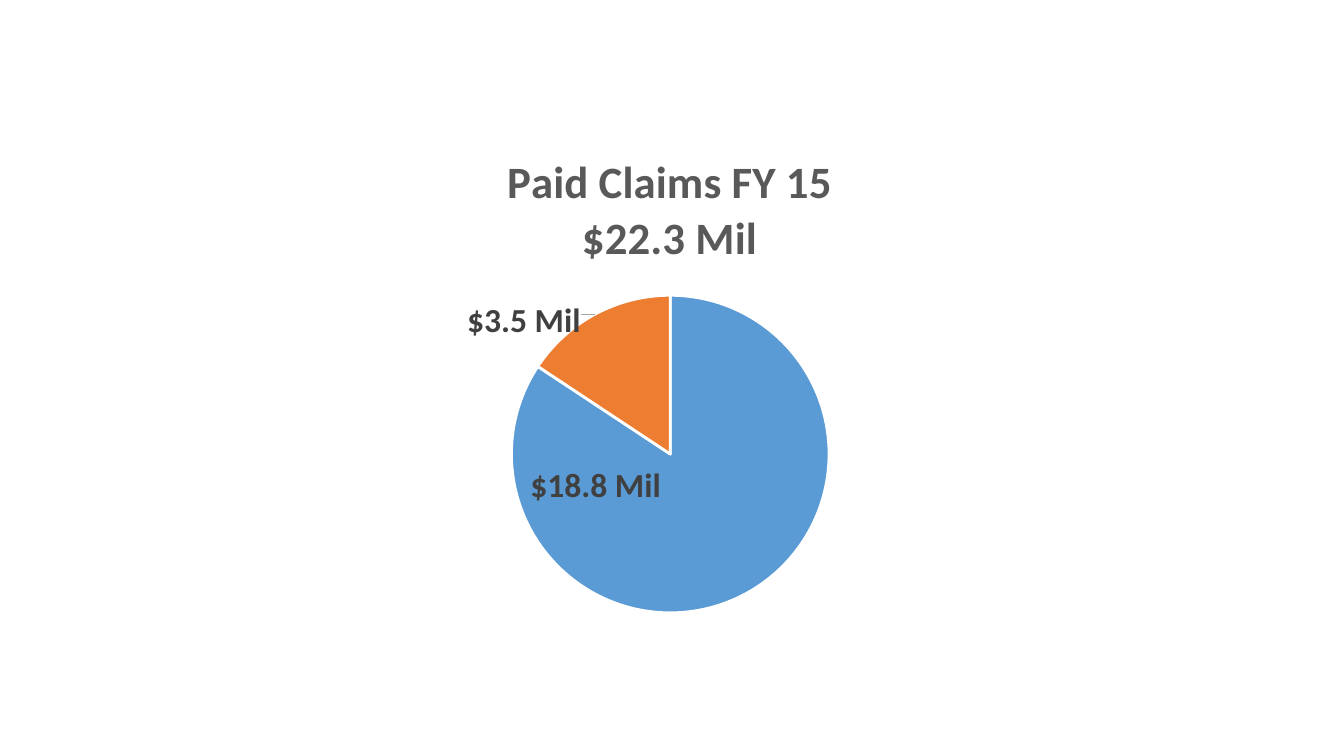
import pptx
import pptx.chart.data
import pptx.dml.color
import pptx.enum.chart
import pptx.oxml
import pptx.oxml.ns
import pptx.util

Pt = pptx.util.Pt
qn = pptx.oxml.ns.qn

# Content: amounts in dollars, label shift as a fraction of the chart
TITLE = ["Paid Claims FY 15", "$22.3 Mil"]
SERIES = "Series 1"
CLAIMS = [
    {"cat": "1", "value": 18800000, "color": "5B9BD5", "shift": (-0.16, -0.07)},
    {"cat": "2", "value": 3500000, "color": "ED7D31", "shift": (-0.155, -0.118)},
]
MILLIONS = '"$"0.0,," Mil"'

THEME = {
    "font": "Calibri", "title": "595959", "label": "404040",
    "edge": "FFFFFF", "leader": "A6A6A6",
    "title_size": 32, "label_size": 24, "base_size": 14,
}
SLIDE = (960, 540)
CHART = (228.24, 92.16, 501.12, 379.44)
TITLE_AT = {"x": 0.263, "y": 0.04}
PLOT_AT = {"x": 0.093, "y": 0.313, "w": 0.814, "h": 0.598}


def rgb(name):
    return pptx.dml.color.RGBColor.from_string(THEME.get(name, name))


def style(font, size, color):
    font.name = THEME["font"]
    font.size = Pt(THEME[size])
    font.bold = True
    font.color.rgb = rgb(color)


def chart_xml(body):
    return pptx.oxml.parse_xml(body.replace(
        ">", f" {pptx.oxml.ns.nsdecls('c', 'a')}>", 1))


def place(parent, index, at, edge=True, inner=False):
    """Put a manual layout at the given child index."""
    for old in parent.findall(qn("c:layout")):
        parent.remove(old)
    parts = ['<c:layoutTarget val="inner"/>'] if inner else []
    if edge:
        parts += [f'<c:{k}Mode val="edge"/>' for k in "xy"]
    parts += [f'<c:{k} val="{v}"/>' for k, v in at.items()]
    parent.insert(index, chart_xml(
        f"<c:layout><c:manualLayout>{''.join(parts)}</c:manualLayout></c:layout>"))


def keep_on_one_line(element):
    for body in element.iter(qn("a:bodyPr")):
        body.set("wrap", "none")


prs = pptx.Presentation()
prs.slide_width, prs.slide_height = map(Pt, SLIDE)
s = prs.slides.add_slide(prs.slide_layouts[6])

# Pie chart
data = pptx.chart.data.CategoryChartData(number_format='"$"#,##0')
data.categories = [c["cat"] for c in CLAIMS]
data.add_series(SERIES, [c["value"] for c in CLAIMS])
chart = s.shapes.add_chart(
    pptx.enum.chart.XL_CHART_TYPE.PIE, *map(Pt, CHART), data).chart
chart.has_legend = False
chart.font.name = THEME["font"]
chart.font.size = Pt(THEME["base_size"])
place(chart._chartSpace.chart.plotArea, 0, PLOT_AT, inner=True)

# Title
chart.has_title = True
tf = chart.chart_title.text_frame
for i, line in enumerate(TITLE):
    p = tf.add_paragraph() if i else tf.paragraphs[0]
    r = p.add_run()
    r.text = line
    style(r.font, "title_size", "title")
chart.chart_title.include_in_layout = False
place(chart.chart_title._element, 1, TITLE_AT)

# Slices and their labels
pie = chart.plots[0].series[0]
labels = pie.data_labels
labels.show_value = True
labels.number_format = MILLIONS
labels.number_format_is_linked = False
style(labels.font, "label_size", "label")
for i, claim in enumerate(CLAIMS):
    point = pie.points[i]
    point.format.fill.solid()
    point.format.fill.fore_color.rgb = rgb(claim["color"])
    point.format.line.color.rgb = rgb("edge")
    point.format.line.width = Pt(2)
    label = point.data_label
    style(label.font, "label_size", "label")
    label.position = pptx.enum.chart.XL_LABEL_POSITION.CENTER
    dlbl = label._dLbl
    place(dlbl, 1, dict(zip("xy", claim["shift"])), edge=False)
    fmt = chart_xml('<c:numFmt></c:numFmt>')
    fmt.set("formatCode", MILLIONS)
    fmt.set("sourceLinked", "0")
    dlbl.insert(2, fmt)
keep_on_one_line(labels._element)

# Leader lines
dlbls = labels._element
for old in dlbls.findall(qn("c:showLeaderLines")):
    dlbls.remove(old)
dlbls.append(chart_xml('<c:showLeaderLines val="1"></c:showLeaderLines>'))
dlbls.append(chart_xml(
    '<c:leaderLines><c:spPr><a:ln w="9525"><a:solidFill>'
    f'<a:srgbClr val="{THEME["leader"]}"/>'
    '</a:solidFill></a:ln></c:spPr></c:leaderLines>'))

prs.save("out.pptx")
